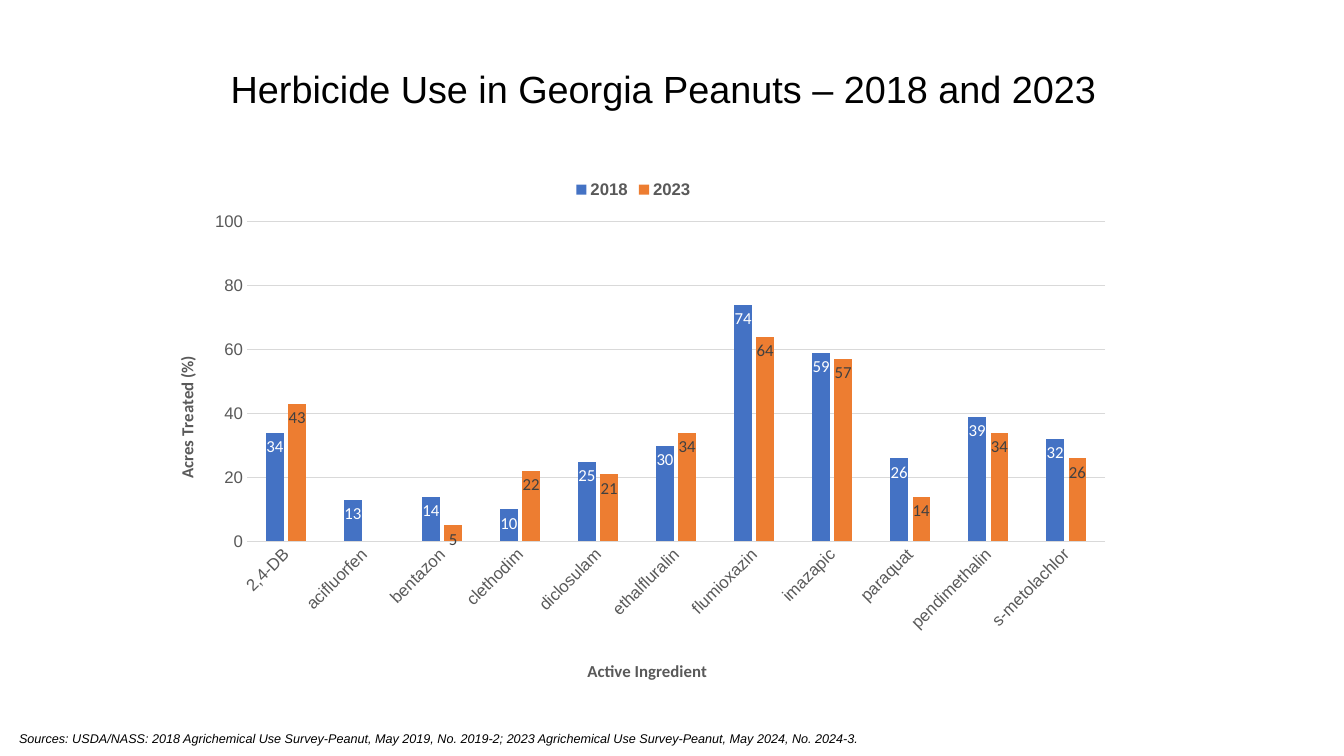
import pptx
import pptx.chart.data
import pptx.dml.color
import pptx.enum.chart
import pptx.enum.text
import pptx.oxml
import pptx.oxml.ns
import pptx.util

Pt = pptx.util.Pt
COLORS = {"text": "000000", "muted": "595959", "grid": "D9D9D9", "white": "FFFFFF",
          "dark": "404040", "blue": "4472C4", "orange": "ED7D31"}

INGREDIENTS = ["2,4-DB", "acifluorfen", "bentazon", "clethodim", "diclosulam", "ethalfluralin",
               "flumioxazin", "imazapic", "paraquat", "pendimethalin", "s-metolachlor"]
# Year: acres treated (%), bar colour, label colour
YEARS = {
    "2018": ([34, 13, 14, 10, 25, 30, 74, 59, 26, 39, 32], "blue", "white"),
    "2023": ([43, None, 5, 22, 21, 34, 64, 57, 14, 34, 26], "orange", "dark"),
}


def rgb(color):
    return pptx.dml.color.RGBColor.from_string(COLORS[color])


class SlideBuilder:
    def __init__(self, slide):
        self.slide = slide

    def style(self, font, size, color, face="Arial", bold=False, italic=False):
        font.name, font.size, font.bold, font.italic = face, Pt(size), bold, italic
        font.color.rgb = rgb(color)

    def text(self, box, words, size, wrap=True, middle=False, spacing=None, italic=False):
        frame = self.slide.shapes.add_textbox(*map(Pt, box)).text_frame
        frame.word_wrap = wrap
        if middle:
            frame.vertical_anchor = pptx.enum.text.MSO_ANCHOR.MIDDLE
        frame.text = words
        paragraph = frame.paragraphs[0]
        paragraph.line_spacing = spacing
        self.style(paragraph.runs[0].font, size, "text", italic=italic)

    def place(self, part, index, **fractions):
        """Give a chart part a fixed place, in fractions of the chart."""
        for old in part.findall(pptx.oxml.ns.qn("c:layout")):
            part.remove(old)
        modes = '<c:xMode val="edge"/><c:yMode val="edge"/>'
        if "w" in fractions:
            modes = '<c:layoutTarget val="inner"/>' + modes
        values = "".join(f'<c:{key} val="{value}"/>' for key, value in fractions.items())
        part.insert(index, pptx.oxml.parse_xml(
            f'<c:layout {pptx.oxml.ns.nsdecls("c")}><c:manualLayout>{modes}{values}'
            '</c:manualLayout></c:layout>'))

    def axis(self, axis, title, x, y, title_turn, label_turn):
        axis.major_tick_mark = axis.minor_tick_mark = pptx.enum.chart.XL_TICK_MARK.NONE
        self.style(axis.tick_labels.font, 12, "muted")
        axis._element.txPr.bodyPr.set("rot", str(label_turn * 60000))
        frame = axis.axis_title.text_frame
        frame.text = title
        self.style(frame.paragraphs[0].runs[0].font, 12, "muted", "Calibri", bold=True)
        frame._txBody.bodyPr.set("rot", str(title_turn * 60000))
        self.place(axis.axis_title._element, 1, x=x, y=y)

    def line(self, line):
        line.color.rgb = rgb("grid")
        line.width = Pt(0.75)

    def column_chart(self, box, categories, years):
        data = pptx.chart.data.CategoryChartData()
        data.categories = categories
        for year, (values, _, _) in years.items():
            data.add_series(year, values)
        chart = self.slide.shapes.add_chart(
            pptx.enum.chart.XL_CHART_TYPE.COLUMN_CLUSTERED, *map(Pt, box), data).chart
        self.style(chart.font, 10, "text", "Calibri")
        chart.has_title = False
        self.place(chart._chartSpace.chart.plotArea, 0, x=0.106, y=0.1, w=0.875, h=0.61)

        # Legend
        chart.has_legend = True
        chart.legend.position = pptx.enum.chart.XL_LEGEND_POSITION.TOP
        chart.legend.include_in_layout = False
        self.style(chart.legend.font, 12, "muted", bold=True)

        # Axes
        ingredients, acres = chart.category_axis, chart.value_axis
        self.axis(ingredients, "Active Ingredient", 0.45, 0.93, 0, -45)
        self.line(ingredients.format.line)
        self.axis(acres, "Acres Treated (%)", 0.03, 0.35, -90, 0)
        acres.minimum_scale, acres.maximum_scale, acres.major_unit = 0, 100, 20
        acres.format.line.fill.background()
        self.line(acres.major_gridlines.format.line)

        # Columns and their labels
        plot = chart.plots[0]
        plot.vary_by_categories = False
        plot.gap_width, plot.overlap = 219, -27
        for series, (_, bar_color, label_color) in zip(plot.series, years.values()):
            series.invert_if_negative = False
            series.format.fill.solid()
            series.format.fill.fore_color.rgb = rgb(bar_color)
            labels = series.data_labels
            labels.show_value = True
            labels.position = pptx.enum.chart.XL_LABEL_POSITION.INSIDE_END
            self.style(labels.font, 12, label_color, "Calibri")


def main():
    deck = pptx.Presentation()
    deck.slide_width, deck.slide_height = Pt(960), Pt(540)
    builder = SlideBuilder(deck.slides.add_slide(deck.slide_layouts[6]))

    # Title
    builder.text((157.7, 25.9, 644.4, 78.5), "Herbicide Use in Georgia Peanuts – 2018 and 2023",
                 27, middle=True, spacing=0.9)
    # Herbicide chart
    builder.column_chart((102.2, 121, 700.6, 374.4), INGREDIENTS, YEARS)
    # Sources
    builder.text((6.5, 518.4, 622, 18),
                 "Sources: USDA/NASS: 2018 Agrichemical Use Survey-Peanut, May 2019, No. 2019-2; "
                 "2023 Agrichemical Use Survey-Peanut, May 2024, No. 2024-3.",
                 9, wrap=False, italic=True)
    deck.save("out.pptx")


if __name__ == "__main__":
    main()
